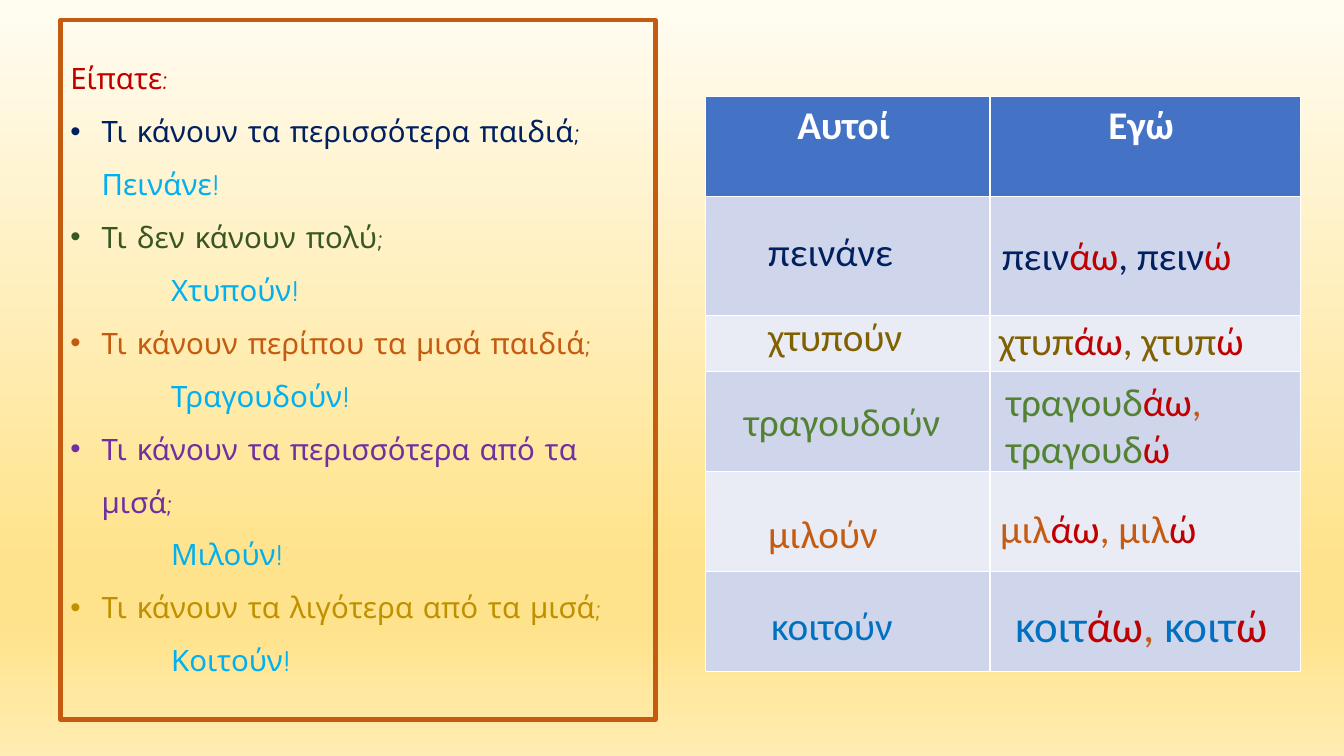
from lxml.etree import SubElement
from pptx import Presentation
from pptx.dml.color import RGBColor
from pptx.enum.shapes import MSO_SHAPE
from pptx.enum.text import MSO_ANCHOR, PP_ALIGN
from pptx.oxml.ns import qn
from pptx.util import Inches, Pt

NAVY = RGBColor(0x00, 0x20, 0x60)
RED = RGBColor(0xC0, 0x00, 0x00)
SKY = RGBColor(0x00, 0xB0, 0xF0)
BLUE = RGBColor(0x00, 0x70, 0xC0)
DARK_GREEN = RGBColor(0x38, 0x57, 0x23)
GREEN = RGBColor(0x54, 0x82, 0x35)
ORANGE = RGBColor(0xC5, 0x5A, 0x11)
PURPLE = RGBColor(0x70, 0x30, 0xA0)
GOLD = RGBColor(0xBF, 0x90, 0x00)
OLIVE = RGBColor(0x80, 0x60, 0x00)
WHITE = RGBColor(0xFF, 0xFF, 0xFF)
HEADER = RGBColor(0x44, 0x72, 0xC4)
BAND_DARK = RGBColor(0xCF, 0xD5, 0xEA)
BAND_LIGHT = RGBColor(0xE9, 0xEB, 0xF5)
BACKGROUND_STOPS = [(0, "FFFCF2"), (74, "FFE38C"), (83, "FFE38C"), (100, "FFECB2")]


def add_text(paragraph, text, color, font="Calibri", size=28, bold=False):
    run = paragraph.add_run()
    run.text = text
    run.font.name = font
    run.font.size = Pt(size)
    run.font.bold = bold
    run.font.color.rgb = color


def indent(paragraph, left, first=0, bullet=None):
    """Set the indents in inches and an optional bullet character."""
    properties = paragraph._p.get_or_add_pPr()
    properties.set("marL", str(Inches(left)))
    properties.set("indent", str(Inches(first)))
    if bullet:
        SubElement(properties, qn("a:buFont"), typeface="Arial")
        SubElement(properties, qn("a:buChar"), char=bullet)


presentation = Presentation()
presentation.slide_width = Inches(13.33)
presentation.slide_height = Inches(7.5)
slide = presentation.slides.add_slide(presentation.slide_layouts[6])

# Background
background = slide.background.fill
background.gradient()
background.gradient_angle = 270
stops = background._fill._gradFill.find(qn("a:gsLst"))
stops.clear()
for position, color in BACKGROUND_STOPS:
    stop = SubElement(stops, qn("a:gs"), pos=str(position * 1000))
    SubElement(stop, qn("a:srgbClr"), val=color)

# Questions and answers
panel = slide.shapes.add_shape(
    MSO_SHAPE.RECTANGLE, Inches(0.6), Inches(0.2), Inches(5.9), Inches(6.94))
panel.shadow.inherit = False
panel.fill.background()
panel.line.color.rgb = ORANGE
panel.line.width = Pt(3.25)
frame = panel.text_frame
frame.word_wrap = True
frame.vertical_anchor = MSO_ANCHOR.TOP
frame.margin_top = Inches(0.4)
panel_format = {"font": "Comic Neue", "size": 21}
frame.paragraphs[0].alignment = PP_ALIGN.LEFT
add_text(frame.paragraphs[0], "Είπατε:", RED, **panel_format)

questions = [
    ("Τι κάνουν τα περισσότερα παιδιά; ", NAVY, "Πεινάνε!"),
    ("Τι δεν κάνουν πολύ;", DARK_GREEN, "Χτυπούν!"),
    ("Τι κάνουν περίπου τα μισά παιδιά;", ORANGE, "Τραγουδούν!"),
    ("Τι κάνουν τα περισσότερα από τα μισά;", PURPLE, "Μιλούν!"),
    ("Τι κάνουν τα λιγότερα από τα μισά;", GOLD, "Κοιτούν!"),
]
for number, (question, color, answer) in enumerate(questions):
    paragraph = frame.add_paragraph()
    paragraph.alignment = PP_ALIGN.LEFT
    paragraph.line_spacing = 1.5
    indent(paragraph, 0.31, -0.31, "•")
    add_text(paragraph, question, color, **panel_format)
    if number > 0:  # the first answer runs on from its question
        paragraph = frame.add_paragraph()
        paragraph.alignment = PP_ALIGN.LEFT
        paragraph.line_spacing = 1.5
        indent(paragraph, 1)
    add_text(paragraph, answer, SKY, **panel_format)

# Verb table
column_widths = [2.82, 3.08]
row_heights = [0.99, 1.18, 0.56, 0.99, 0.99, 0.99]
table = slide.shapes.add_table(
    len(row_heights), len(column_widths), Inches(7), Inches(0.96),
    Inches(sum(column_widths)), Inches(sum(row_heights))).table
for column, width in zip(table.columns, column_widths):
    column.width = Inches(width)
for row_number, height in enumerate(row_heights):
    table.rows[row_number].height = Inches(height)
    band = BAND_DARK if row_number % 2 else BAND_LIGHT
    for cell in table.rows[row_number].cells:
        cell.fill.solid()
        cell.fill.fore_color.rgb = band if row_number else HEADER
for cell, heading in zip(table.rows[0].cells, ["Αυτοί ", "Εγώ "]):
    paragraph = cell.text_frame.paragraphs[0]
    paragraph.alignment = PP_ALIGN.CENTER
    add_text(paragraph, heading, WHITE, bold=True)

# Verb forms: left, top, width, height, size, coloured pieces
verb_forms = [
    (7.52, 2.21, 1.67, 0.57, 28, [("πεινάνε", NAVY)]),
    (9.84, 2.25, 2.56, 0.57, 28,
     [("πειν", NAVY), ("άω", RED), (", πειν", NAVY), ("ώ", RED)]),
    (7.52, 3.05, 2, 0.57, 28, [("χτυπούν", OLIVE)]),
    (9.81, 3.09, 2.94, 0.57, 28,
     [("χτυπ", OLIVE), ("άω", RED), (", χτυπ", OLIVE), ("ώ", RED)]),
    (7.28, 3.89, 2.49, 0.57, 28, [("τραγουδούν", GREEN)]),
    (9.88, 3.69, 2.86, 1.04, 28,
     [("τραγουδ", GREEN), ("άω", RED), (", ", ORANGE), ("τραγουδ", GREEN), ("ώ", RED)]),
    (7.52, 5, 1.67, 0.57, 28, [("μιλούν", ORANGE)]),
    (9.82, 4.95, 2.54, 0.57, 28,
     [("μιλ", ORANGE), ("άω", RED), (", μιλ", ORANGE), ("ώ", RED)]),
    (7.55, 5.92, 1.67, 0.57, 28, [("κοιτούν", BLUE)]),
    (9.97, 5.88, 2.72, 0.64, 32,
     [("κοιτ", BLUE), ("άω", RED), (", ", ORANGE), ("κοιτ", BLUE), ("ώ", RED)]),
]
for left, top, width, height, size, pieces in verb_forms:
    box = slide.shapes.add_textbox(Inches(left), Inches(top), Inches(width), Inches(height))
    box.text_frame.word_wrap = True
    for text, color in pieces:
        add_text(box.text_frame.paragraphs[0], text, color, size=size)

presentation.save("out.pptx")
